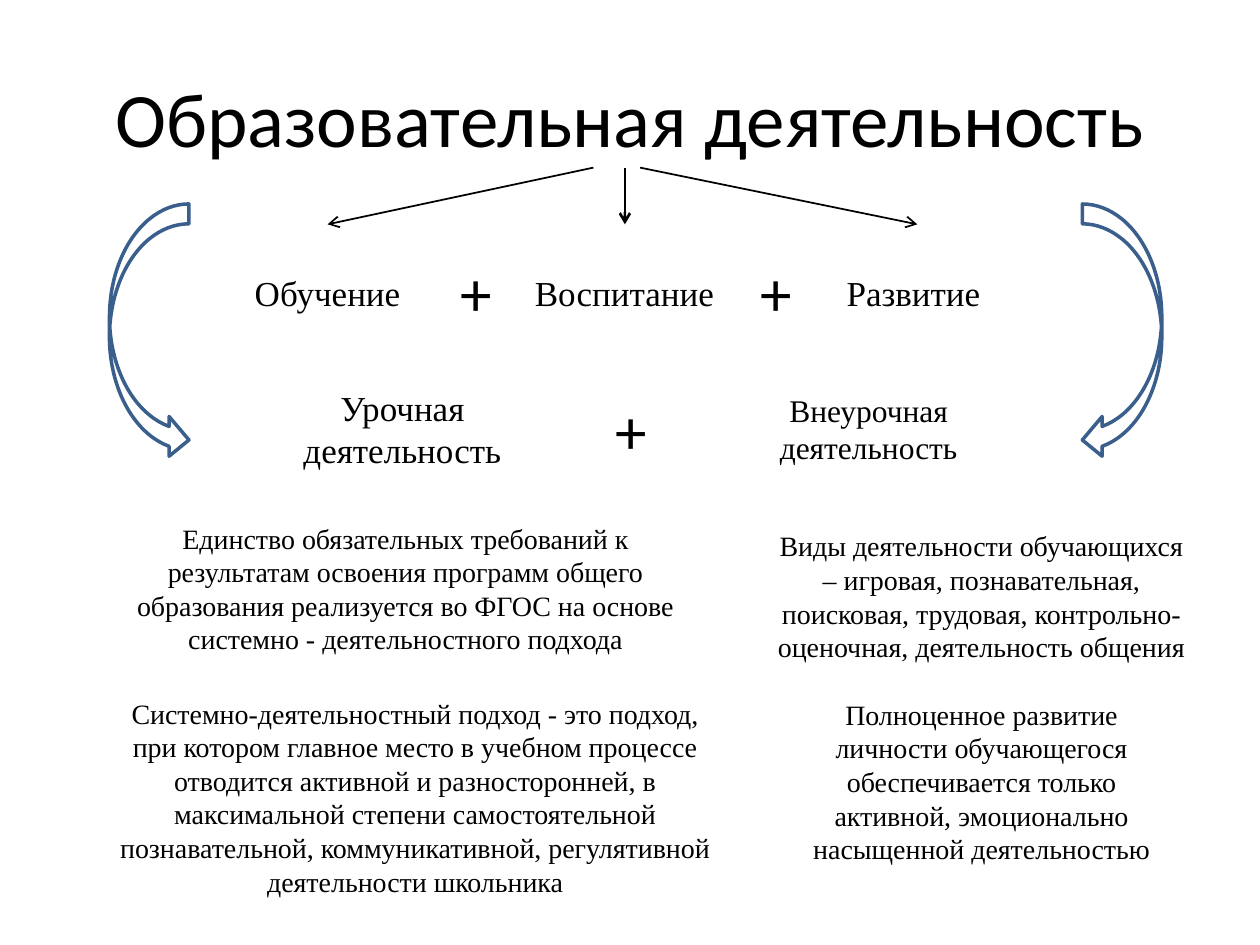
from lxml.etree import SubElement
from pptx import Presentation
from pptx.dml.color import RGBColor
from pptx.enum.shapes import MSO_CONNECTOR, MSO_SHAPE
from pptx.enum.text import MSO_ANCHOR, PP_ALIGN
from pptx.oxml.ns import qn
from pptx.util import Pt

BLACK = RGBColor(0x00, 0x00, 0x00)
BLUE = RGBColor(0x3A, 0x5F, 0x8C)
SANS = "Calibri"
SERIF = "Times New Roman"

TITLE = ("Образовательная деятельность", 36, 21.6, 648, 90, 44)

COMPONENTS = [("Обучение", 133.2, 108), ("Воспитание", 297.4, 118.8), ("Развитие", 470.9, 102.2)]
COMPONENT_TOP, COMPONENT_HEIGHT = 139, 56.2

ACTIVITIES = [("Урочная деятельность", 156.2, 20), ("Внеурочная деятельность", 422.6, 18)]
ACTIVITY_TOP, ACTIVITY_WIDTH, ACTIVITY_HEIGHT = 218.9, 147.6, 51.8

PLUSES = [(251.3, 149), (422.6, 149), (339.8, 227.5)]
PLUS_WIDTH, PLUS_HEIGHT = 41.8, 35.3

DESCRIPTIONS = [
    ("Единство обязательных требований к результатам освоения программ общего образования "
     "реализуется во ФГОС на основе системно - деятельностного подхода",
     62.6, 292.3, 338.4, 87.8),
    ("Системно-деятельностный подход - это подход, при котором главное место в учебном процессе "
     "отводится активной и разносторонней, в максимальной степени самостоятельной "
     "познавательной, коммуникативной, регулятивной деятельности школьника",
     57.6, 393.1, 359.3, 124.6),
    ("Виды деятельности обучающихся – игровая, познавательная, поисковая, трудовая, "
     "контрольно-оценочная, деятельность общения",
     433.4, 298.1, 254.9, 85),
    ("Полноценное развитие личности обучающегося обеспечивается только активной, "
     "эмоционально насыщенной деятельностью",
     442.8, 394.6, 236.2, 103.7),
]

BRANCHES = [(357.1, 357.1, 1.5), (365.8, 524.2, 1), (339.1, 187.2, 1)]
BRANCH_TOP, BRANCH_BOTTOM = 95.8, 128.2

CURVES = [(MSO_SHAPE.CURVED_RIGHT_ARROW, 62.6), (MSO_SHAPE.CURVED_LEFT_ARROW, 618.5)]
CURVE_TOP, CURVE_WIDTH, CURVE_HEIGHT = 116.6, 45.4, 146.2


def add_text(page, text, left, top, width, height, size, font=SERIF):
    box = page.shapes.add_textbox(Pt(left), Pt(top), Pt(width), Pt(height))
    frame = box.text_frame
    frame.word_wrap = True
    frame.vertical_anchor = MSO_ANCHOR.MIDDLE
    paragraph = frame.paragraphs[0]
    paragraph.text = text
    paragraph.alignment = PP_ALIGN.CENTER
    paragraph.font.name = font
    paragraph.font.size = Pt(size)
    paragraph.font.color.rgb = BLACK


def add_branch(page, start, end, weight):
    branch = page.shapes.add_connector(
        MSO_CONNECTOR.STRAIGHT, Pt(start), Pt(BRANCH_TOP), Pt(end), Pt(BRANCH_BOTTOM))
    branch.line.color.rgb = BLACK
    branch.line.width = Pt(weight)
    SubElement(branch.line._get_or_add_ln(), qn("a:tailEnd"), type="arrow")
    SubElement(branch._element.spPr, qn("a:effectLst"))


def add_curve(page, kind, left):
    curve = page.shapes.add_shape(
        kind, Pt(left), Pt(CURVE_TOP), Pt(CURVE_WIDTH), Pt(CURVE_HEIGHT))
    curve.shadow.inherit = False
    curve.fill.background()
    curve.line.color.rgb = BLUE
    curve.line.width = Pt(2)


def main():
    deck = Presentation()
    deck.slide_width, deck.slide_height = Pt(720), Pt(540)
    page = deck.slides.add_slide(deck.slide_layouts[6])

    add_text(page, *TITLE, font=SANS)
    for text, left, width in COMPONENTS:
        add_text(page, text, left, COMPONENT_TOP, width, COMPONENT_HEIGHT, 20)
    for branch in BRANCHES:
        add_branch(page, *branch)
    for curve in CURVES:
        add_curve(page, *curve)
    for text, left, size in ACTIVITIES:
        add_text(page, text, left, ACTIVITY_TOP, ACTIVITY_WIDTH, ACTIVITY_HEIGHT, size)
    for left, top in PLUSES:
        add_text(page, "+", left, top, PLUS_WIDTH, PLUS_HEIGHT, 36, SANS)
    for description in DESCRIPTIONS:
        add_text(page, *description, size=16)

    deck.save("out.pptx")


if __name__ == "__main__":
    main()
